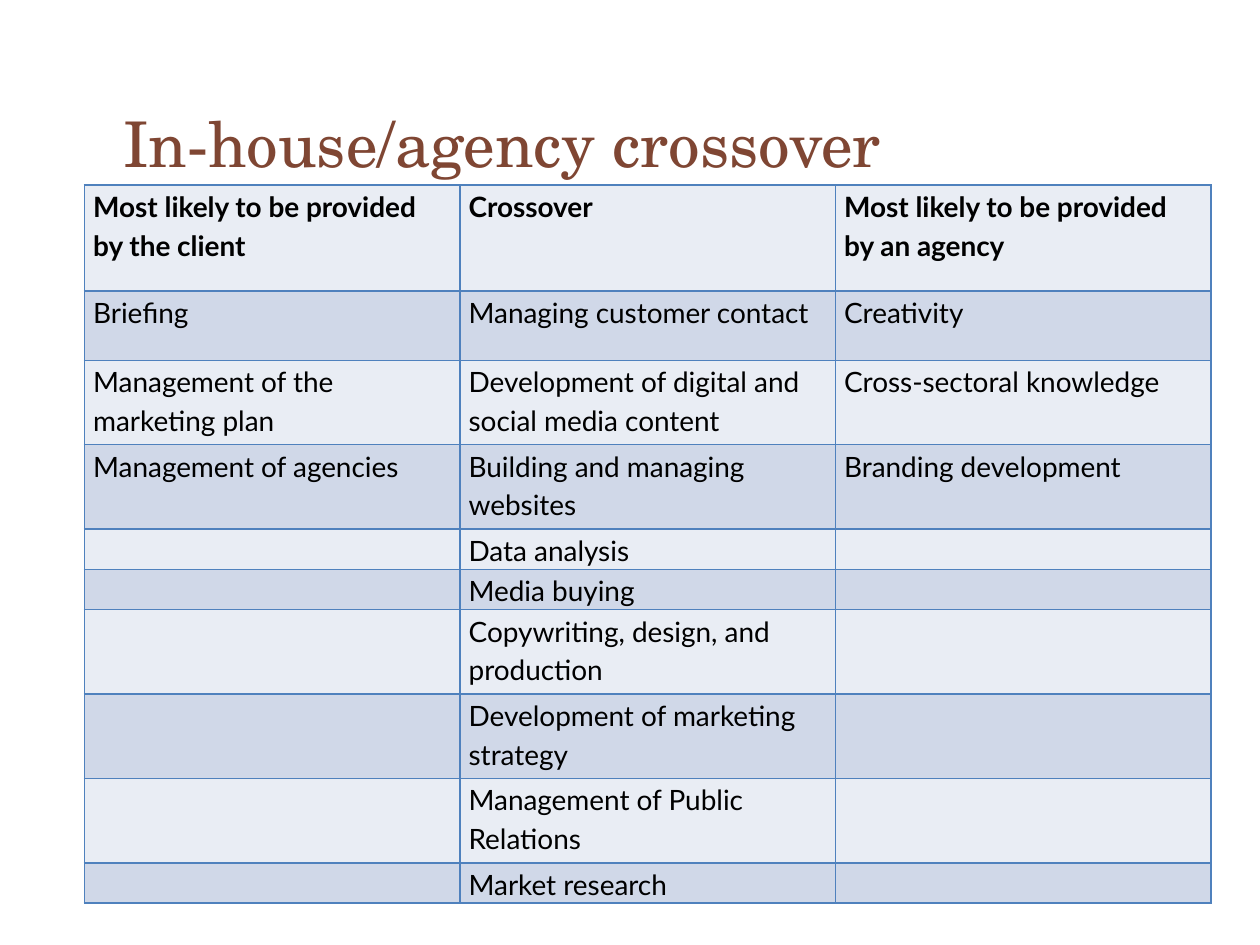
from lxml import etree
from pptx import Presentation
from pptx.dml.color import RGBColor
from pptx.oxml import parse_xml
from pptx.oxml.ns import nsdecls
from pptx.util import Inches, Pt

BROWN = RGBColor(0x7F, 0x46, 0x33)
BLACK = RGBColor(0x00, 0x00, 0x00)
BORDER_BLUE = RGBColor(0x4F, 0x81, 0xBD)
BANDS = [RGBColor(0xE9, 0xED, 0xF4), RGBColor(0xD0, 0xD8, 0xE8)]

ROWS = [
    (0.84, "Most likely to be provided by the client", "Crossover",
     "Most likely to be provided by an agency"),
    (0.55, "Briefing", "Managing customer contact", "Creativity"),
    (0.67, "Management of the marketing plan",
     "Development of digital and social media content", "Cross-sectoral knowledge"),
    (0.67, "Management of agencies", "Building and managing websites",
     "Branding development"),
    (0.32, "", "Data analysis", ""),
    (0.32, "", "Media buying", ""),
    (0.67, "", "Copywriting, design, and production", ""),
    (0.67, "", "Development of marketing strategy", ""),
    (0.67, "", "Management of Public Relations", ""),
    (0.32, "", "Market research", ""),
]
COLUMN_WIDTH = 2.98


def add_borders(cell):
    for side in ("lnL", "lnR", "lnT", "lnB"):
        cell._tc.get_or_add_tcPr().append(parse_xml(
            f'<a:{side} {nsdecls("a")} w="{Pt(1)}"><a:solidFill>'
            f'<a:srgbClr val="{BORDER_BLUE}"/></a:solidFill></a:{side}>'))


deck = Presentation()
deck.slide_width, deck.slide_height = Inches(10), Inches(7.5)
page = deck.slides.add_slide(deck.slide_layouts[6])

table = page.shapes.add_table(
    len(ROWS), 3, Inches(0.67), Inches(1.47),
    Inches(3 * COLUMN_WIDTH), Inches(sum(row[0] for row in ROWS))).table
table.first_row = False
table.horz_banding = False
for column in table.columns:
    column.width = Inches(COLUMN_WIDTH)

for row_index, (height, *texts) in enumerate(ROWS):
    table.rows[row_index].height = Inches(height)
    for column_index, text in enumerate(texts):
        cell = table.cell(row_index, column_index)
        cell.margin_left = cell.margin_right = Inches(0.07)
        cell.margin_top = cell.margin_bottom = 0
        add_borders(cell)
        cell.fill.solid()
        cell.fill.fore_color.rgb = BANDS[row_index % 2]
        paragraph = cell.text_frame.paragraphs[0]
        if not text:
            end = etree.SubElement(paragraph._p, "{http://schemas.openxmlformats.org/drawingml/2006/main}endParaRPr")
            end.set("sz", "1600")
            continue
        paragraph.text = text
        paragraph.line_spacing = 1.15
        paragraph.space_after = Pt(12)
        paragraph.font.name = "Lato"
        paragraph.font.size = Pt(16)
        paragraph.font.bold = row_index == 0
        paragraph.font.color.rgb = BLACK

title = page.shapes.add_textbox(Inches(0.98), Inches(0.76), Inches(7.13), Inches(0.71))
frame = title.text_frame
frame.word_wrap = True
frame.margin_left = frame.margin_right = frame.margin_top = frame.margin_bottom = 0
heading = frame.paragraphs[0]
heading.text = "In-house/agency crossover"
heading.line_spacing = Pt(48)
heading.font.name = "TeX Gyre Schola"
heading.font.size = Pt(36)
heading.font.color.rgb = BROWN

deck.save("out.pptx")
